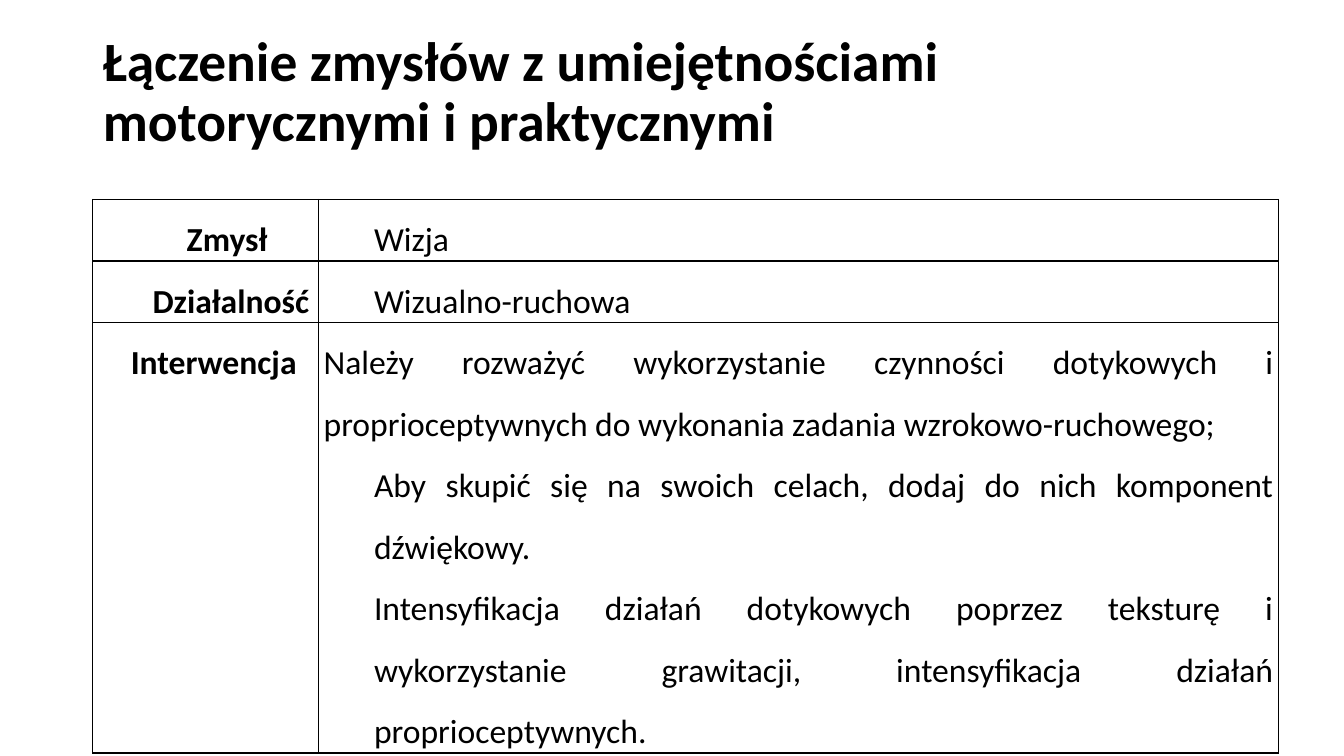
"""Builds a slide with a table linking a sense to motor and practical skills."""
from pptx import Presentation
from pptx.dml.color import RGBColor
from pptx.enum.text import MSO_ANCHOR as Anchor, MSO_AUTO_SIZE as AutoSize, PP_ALIGN as Align
from pptx.oxml import parse_xml
from pptx.oxml.ns import nsdecls
from pptx.util import Inches, Pt

BLACK = RGBColor(0, 0, 0)
LEFT, WIDTH = Inches(0.92), Inches(11.76)
COLUMNS = [2.24, 9.52]
LINE = 0.61
LINES_PER_ROW = [1, 1, 7]
INDENT = 0.5

ROWS = [
    ([("Zmysł ", INDENT)], [("Wizja", INDENT)]),
    ([("Działalność", INDENT)], [("Wizualno-ruchowa", INDENT)]),
    ([("Interwencja", 0.16)], [
        ("Należy rozważyć wykorzystanie czynności dotykowych i proprioceptywnych "
         "do wykonania zadania wzrokowo-ruchowego;", 0),
        ("Aby skupić się na swoich celach, dodaj do nich komponent dźwiękowy.", INDENT),
        ("Intensyfikacja działań dotykowych poprzez teksturę i wykorzystanie grawitacji, "
         "intensyfikacja działań proprioceptywnych.", INDENT),
    ]),
]


def write(paragraph, text, size, bold, align, spacing):
    paragraph.alignment = align
    paragraph.line_spacing = spacing
    run = paragraph.add_run()
    run.text = text
    for key, value in {"name": "Calibri", "size": Pt(size), "bold": bold}.items():
        setattr(run.font, key, value)
    run.font.color.rgb = BLACK


deck = Presentation()
deck.slide_width, deck.slide_height = Inches(13.33), Inches(7.5)
slide = deck.slides.add_slide(deck.slide_layouts[5])

heading = slide.shapes.title
for key, value in {"left": LEFT, "top": Inches(0.4),
                   "width": WIDTH, "height": Inches(1.06)}.items():
    setattr(heading, key, value)
for key, value in {"word_wrap": True, "auto_size": AutoSize.NONE,
                   "vertical_anchor": Anchor.MIDDLE}.items():
    setattr(heading.text_frame, key, value)
write(heading.text_frame.paragraphs[0],
      "Łączenie zmysłów z umiejętnościami motorycznymi i praktycznymi",
      39.6, True, Align.LEFT, 0.9)

senses = slide.shapes.add_table(len(ROWS), len(COLUMNS), LEFT, Inches(1.98),
                                WIDTH, Inches(LINE * sum(LINES_PER_ROW))).table
for flag in ("first_row", "horz_banding"):
    setattr(senses, flag, False)
for column, width in zip(senses.columns, COLUMNS):
    column.width = Inches(width)
for row, lines in zip(senses.rows, LINES_PER_ROW):
    row.height = Inches(LINE * lines)

for row, contents in zip(senses.rows, ROWS):
    for column, (cell, entries) in enumerate(zip(row.cells, contents)):
        is_label = column == 0
        for key, value in {"margin_left": Inches(0.05), "margin_right": Inches(0.05),
                           "margin_top": 0, "margin_bottom": 0,
                           "vertical_anchor": Anchor.TOP}.items():
            setattr(cell, key, value)
        for number, (text, indent) in enumerate(entries):
            frame = cell.text_frame
            paragraph = frame.add_paragraph() if number else frame.paragraphs[0]
            write(paragraph, text, 24, is_label,
                  Align.CENTER if is_label else Align.JUSTIFY, 1.5)
            paragraph._p.get_or_add_pPr().set("marL", str(Inches(indent)))
        borders = cell._tc.get_or_add_tcPr()
        for side in ("lnL", "lnR", "lnT", "lnB"):
            borders.append(parse_xml(
                f'<a:{side} {nsdecls("a")} w="{Pt(1)}"><a:solidFill>'
                f'<a:srgbClr val="{BLACK}"/></a:solidFill></a:{side}>'))
        cell.fill.background()

deck.save("out.pptx")
